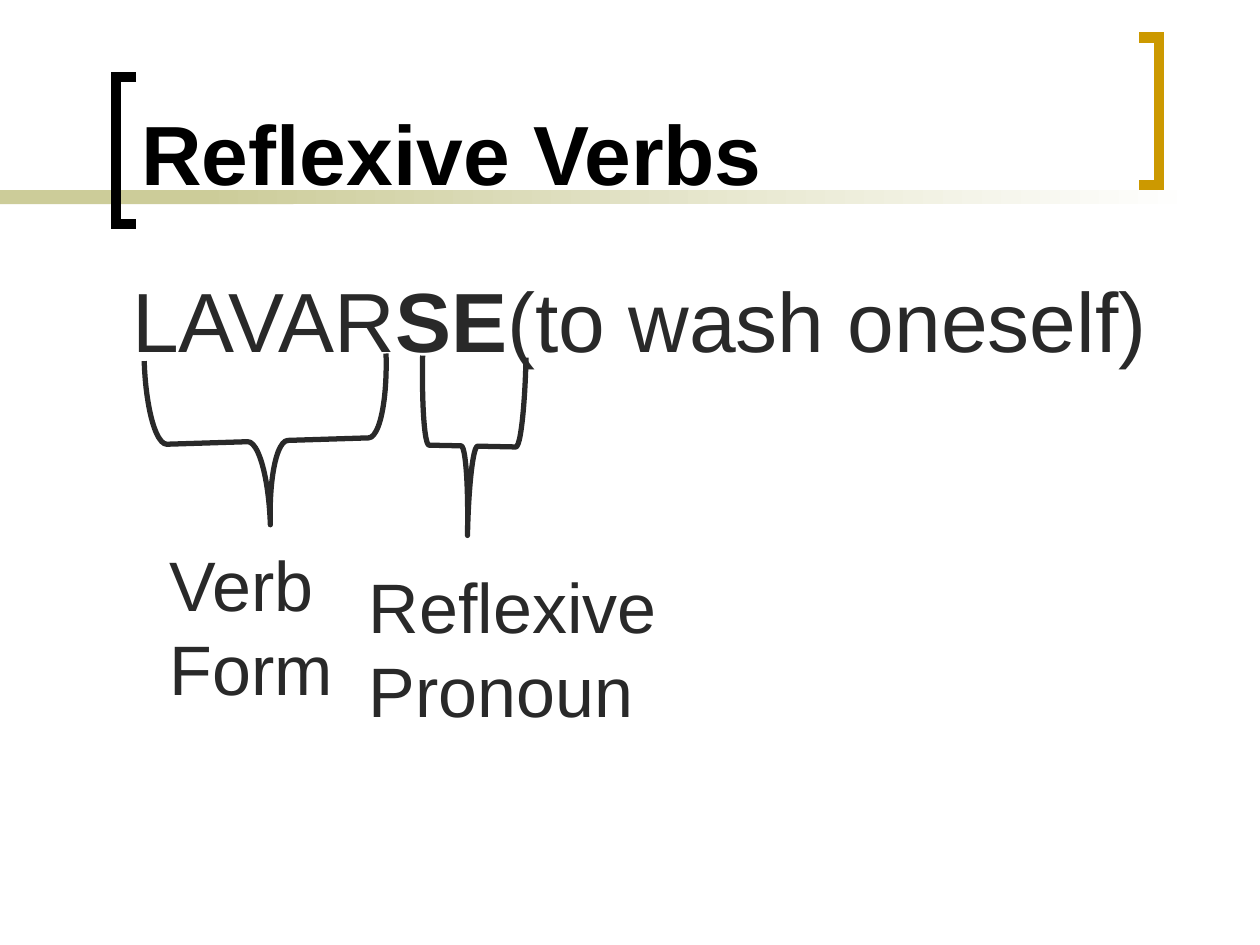
from dataclasses import dataclass

from lxml import etree
from pptx import Presentation
from pptx.dml.color import RGBColor
from pptx.enum.shapes import MSO_SHAPE
from pptx.enum.text import MSO_ANCHOR, MSO_AUTO_SIZE, PP_ALIGN
from pptx.oxml.ns import qn
from pptx.util import Emu, Inches, Pt

RECT, BRACE = MSO_SHAPE.RECTANGLE, MSO_SHAPE.LEFT_BRACE
LEFT, TOP, BOTTOM = PP_ALIGN.LEFT, MSO_ANCHOR.TOP, MSO_ANCHOR.BOTTOM
FIXED, GROW = MSO_AUTO_SIZE.NONE, MSO_AUTO_SIZE.SHAPE_TO_FIT_TEXT

COLS, ROWS = 100, 75
FONT = "Arial"
BLACK, INK, SAGE, GOLD, WHITE = "000000", "292929", "CCCC99", "CC9900", "FFFFFF"

prs = Presentation()
prs.slide_width, prs.slide_height = Inches(10), Inches(7.5)


def col(n: float) -> Emu:
    return Emu(round(prs.slide_width * n / COLS))


def row(n: float) -> Emu:
    return Emu(round(prs.slide_height * n / ROWS))


def rgb(value: str) -> RGBColor:
    return RGBColor.from_string(value)


@dataclass
class Box:
    x: float
    y: float
    w: float
    h: float

    def emu(self) -> tuple:
        return col(self.x), row(self.y), col(self.w), row(self.h)


@dataclass
class Bracket:
    spine: float
    tip: float
    top: float
    color: str


@dataclass
class Brace:
    box: Box
    rotation: float
    curl: float
    point: float


@dataclass
class Label:
    box: Box
    lines: tuple


BAND_TOP, BAND_HEIGHT, BRACKET_HEIGHT = 15.1, 1.1, 11.7
BRACKETS = (
    Bracket(9.2, 10.8, 6.1, BLACK),
    Bracket(92, 90.4, 3, GOLD),
)
BRACES = (
    Brace(Box(14.6, 25.4, 13.3, 19.2), 268.2, 0.12, 0.5),
    Brace(Box(30.4, 31.3, 14.2, 8.2), 271.2, 0.08, 0.47),
)
LABELS = (
    Label(Box(12.5, 42.5, 15, 14.3), ("Verb", "Form")),
    Label(Box(28.3, 44.2, 24.9, 14.3), ("Reflexive", "Pronoun")),
)


def add_run(p, text: str, size: float, color: str, bold: bool = False) -> None:
    r = p.add_run()
    r.text = text
    r.font.name, r.font.size, r.font.bold = FONT, Pt(size), bold
    r.font.color.rgb = rgb(color)


def place(sp, box: Box, anchor) -> None:
    sp.left, sp.top, sp.width, sp.height = box.emu()
    tf = sp.text_frame
    tf.word_wrap, tf.auto_size, tf.vertical_anchor = True, FIXED, anchor
    tf.paragraphs[0].alignment = LEFT
    tree = sp._element.getparent()
    tree.append(sp._element)


def add_band(s, x: float, w: float, fade: bool = False) -> None:
    sp = s.shapes.add_shape(RECT, *Box(x, BAND_TOP, w, BAND_HEIGHT).emu())
    sp.shadow.inherit = False
    sp.line.fill.background()
    if fade:
        sp.fill.gradient()
        sp.fill.gradient_angle = 0
        for stop, position, color in zip(sp.fill.gradient_stops, (0, 1), (SAGE, WHITE)):
            stop.position, stop.color.rgb = position, rgb(color)
    else:
        sp.fill.solid()
        sp.fill.fore_color.rgb = rgb(SAGE)


def outline(sp, color: str, width: float) -> None:
    sp.shadow.inherit = False
    sp.fill.background()
    sp.line.color.rgb = rgb(color)
    sp.line.width = Pt(width)


def add_bracket(s, b: Bracket) -> None:
    top, bottom = row(b.top), row(b.top + BRACKET_HEIGHT)
    fb = s.shapes.build_freeform(col(b.tip), top)
    fb.add_line_segments(
        [(col(b.spine), top), (col(b.spine), bottom), (col(b.tip), bottom)], close=False)
    sp = fb.convert_to_shape()
    outline(sp, b.color, 6)
    etree.SubElement(sp.line._ln, qn("a:miter"), lim="800000")


def add_brace(s, b: Brace) -> None:
    sp = s.shapes.add_shape(BRACE, *b.box.emu())
    sp.rotation = b.rotation
    sp.adjustments[0], sp.adjustments[1] = b.curl, b.point
    outline(sp, INK, 3)


def add_label(s, label: Label) -> None:
    tf = s.shapes.add_textbox(*label.box.emu()).text_frame
    tf.word_wrap, tf.auto_size = False, GROW
    for i, line in enumerate(label.lines):
        p = tf.add_paragraph() if i else tf.paragraphs[0]
        add_run(p, line, 40, INK)


def main() -> None:
    s = prs.slides.add_slide(prs.slide_layouts[1])
    add_band(s, 0, 23.3)
    add_band(s, 15.8, 79.2, fade=True)
    for bracket in BRACKETS:
        add_bracket(s, bracket)

    title, body = s.placeholders
    place(title, Box(10.2, 1.1, 78.3, 15.5), BOTTOM)
    add_run(title.text_frame.paragraphs[0], "Reflexive Verbs", 48, BLACK, True)

    place(body, Box(5.8, 20.8, 89.2, 45), TOP)
    p = body.text_frame.paragraphs[0]
    pPr = p._p.get_or_add_pPr()
    pPr.set("marL", str(col(4.9)))
    pPr.set("indent", str(col(-1.2)))
    etree.SubElement(pPr, qn("a:buNone"))
    add_run(p, "LAVAR", 48, INK)
    add_run(p, "SE", 48, INK, True)
    add_run(p, "(to wash oneself)", 48, INK)

    for brace, label in zip(BRACES, LABELS):
        add_brace(s, brace)
        add_label(s, label)
    prs.save("out.pptx")


if __name__ == "__main__":
    main()
